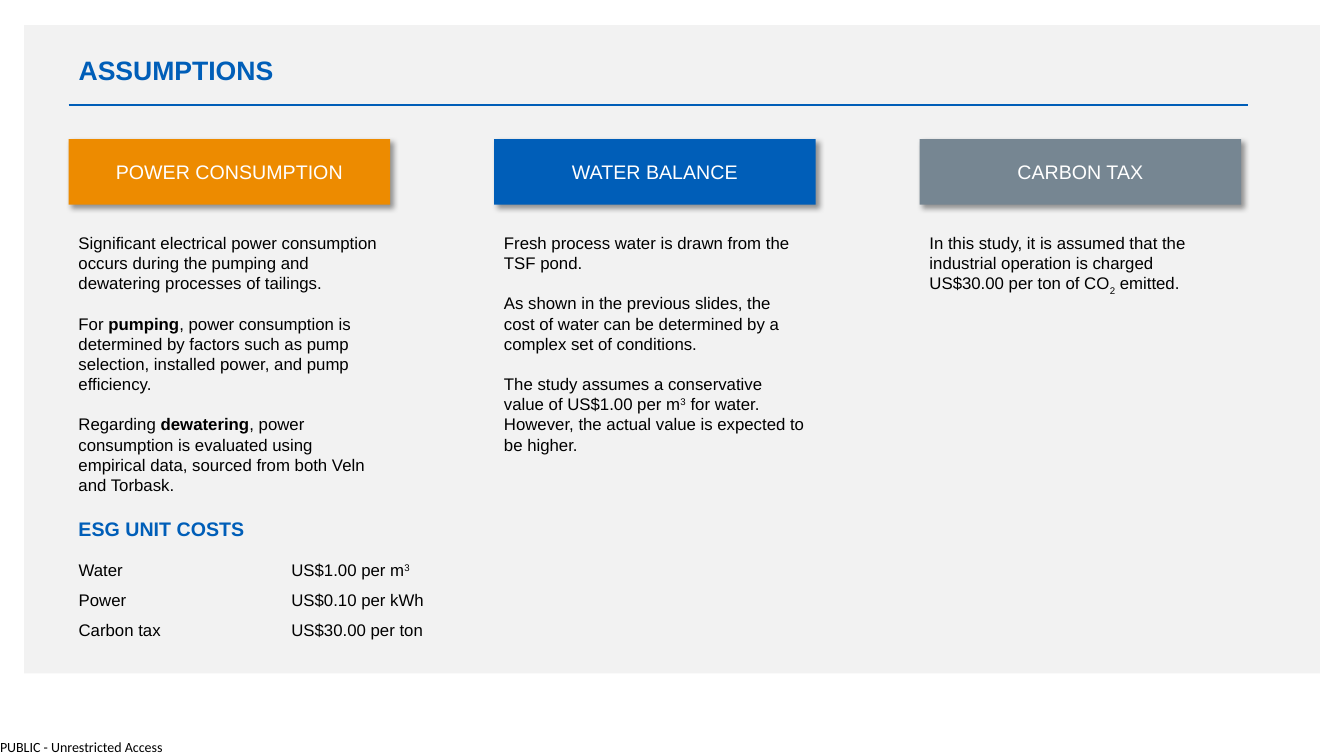
import dataclasses

import pptx
import pptx.dml.color
import pptx.enum.shapes
import pptx.enum.text
import pptx.oxml
import pptx.oxml.ns
import pptx.util

ANCHOR = pptx.enum.text.MSO_ANCHOR
ALIGN = pptx.enum.text.PP_ALIGN
RECT = pptx.enum.shapes.MSO_SHAPE.RECTANGLE
STRAIGHT = pptx.enum.shapes.MSO_CONNECTOR.STRAIGHT
NS = pptx.oxml.ns.nsdecls("a")
NO_STYLE = "{2D5ABB26-0587-4C30-8999-92F81FD0307C}"


@dataclasses.dataclass(frozen=True)
class Theme:
    blue: str = "005EB8"
    orange: str = "ED8B00"
    slate: str = "768692"
    panel: str = "F2F2F2"
    white: str = "FFFFFF"
    black: str = "000000"
    font: str = "Arial"
    label_font: str = "Calibri"
    title: float = 19
    heading: float = 14
    body: float = 12
    label: float = 10
    gap: float = 14.4


@dataclasses.dataclass(frozen=True)
class Box:
    """A rectangle in inches."""
    x: float
    y: float
    w: float
    h: float

    def emu(self):
        return [pptx.util.Inches(v) for v in (self.x, self.y, self.w, self.h)]


THEME = Theme()
SLIDE = Box(0, 0, 13.33, 7.5)
PANEL = Box(0.24, 0.25, 12.85, 6.43)
LEFT, PITCH, COLUMN_W = 0.68, 4.22, 3.19
HEADER_H, BODY_DROP = 0.65, 0.88

# Each paragraph is a list of (text, style) runs.
COLUMNS = [
    ("POWER CONSUMPTION", THEME.orange, [
        [("Significant electrical power consumption occurs during the pumping "
          "and dewatering processes of tailings.", "")],
        [("For ", ""), ("pumping", "bold"),
         (", power consumption is determined by factors such as pump "
          "selection, installed power, and pump efficiency.", "")],
        [("Regarding ", ""), ("dewatering", "bold"),
         (", power consumption is evaluated using empirical data, sourced "
          "from both Veln and Torbask.", "")],
    ]),
    ("WATER BALANCE", THEME.blue, [
        [("Fresh process water is drawn from the TSF pond.", "")],
        [("As shown in the previous slides, the cost of water can be "
          "determined by a complex set of conditions.", "")],
        [("The study assumes a conservative value of US$1.00 per m", ""),
         ("3", "super"),
         (" for water. However, the actual value is expected to be higher.", "")],
    ]),
    ("CARBON TAX", THEME.slate, [
        [("In this study, it is assumed that the industrial operation is "
          "charged US$30.00 per ton of CO", ""), ("2", "sub"), (" emitted.", "")],
    ]),
]
UNIT_COSTS = [
    ("Water", [("US$1.00 per m", ""), ("3", "super")]),
    ("Power", [("US$0.10 per kWh", "")]),
    ("Carbon tax", [("US$30.00 per ton", "")]),
]
BASELINES = {"super": "30000", "sub": "-25000"}


def rgb(color):
    return pptx.dml.color.RGBColor.from_string(color)


def write(p, runs, size, color=THEME.black, bold=False, font=THEME.font):
    for text, style in runs:
        r = p.add_run()
        r.text = text
        r.font.name, r.font.size = font, pptx.util.Pt(size)
        r.font.color.rgb = rgb(color)
        r.font.bold = bold or style == "bold"
        if style in BASELINES:
            r.font._element.set("baseline", BASELINES[style])


def add_text(slide, box, paragraphs, size, **style):
    sp = slide.shapes.add_textbox(*box.emu())
    tf = sp.text_frame
    tf.word_wrap = True
    for i, runs in enumerate(paragraphs):
        p = tf.add_paragraph() if i else tf.paragraphs[0]
        if i:
            p.space_before = pptx.util.Pt(THEME.gap)
        write(p, runs, size, **style)
    return tf


def add_block(slide, box, color):
    sp = slide.shapes.add_shape(RECT, *box.emu())
    sp.shadow.inherit = False
    sp.fill.solid()
    sp.fill.fore_color.rgb = rgb(color)
    sp.line.fill.background()
    return sp


def add_shadow(sp):
    effects = sp._element.spPr.find(pptx.oxml.ns.qn("a:effectLst"))
    effects.append(pptx.oxml.parse_xml(
        f'<a:outerShdw {NS} blurRad="{pptx.util.Pt(4)}" dist="{pptx.util.Pt(3)}" '
        'dir="2700000" algn="tl" rotWithShape="0"><a:srgbClr val="000000">'
        '<a:alpha val="40000"/></a:srgbClr></a:outerShdw>'))


def add_frame(slide, panel):
    """Grey panel, rule under the title and access label."""
    add_block(slide, panel, THEME.panel)
    y = panel.y + 0.79
    ends = [pptx.util.Inches(v) for v in (LEFT, y, LEFT + 11.7, y)]
    rule = slide.shapes.add_connector(STRAIGHT, *ends)
    rule.line.color.rgb = rgb(THEME.blue)
    rule.line.width = pptx.util.Pt(1)
    rule._element.spPr.append(pptx.oxml.parse_xml(f"<a:effectLst {NS}/>"))
    tf = add_text(slide, Box(0, SLIDE.h - 0.17, 1.65, 0.17),
                  [[("PUBLIC - Unrestricted Access", "")]],
                  THEME.label, font=THEME.label_font)
    tf.margin_left = tf.margin_right = tf.margin_top = tf.margin_bottom = 0


def add_title(slide, box, text):
    title = slide.shapes.title
    slide.shapes._spTree.append(title._element)  # in front of the panel
    title.left, title.top, title.width, title.height = box.emu()
    tf = title.text_frame
    tf.vertical_anchor = ANCHOR.TOP
    tf.auto_size = pptx.enum.text.MSO_AUTO_SIZE.NONE
    p = tf.paragraphs[0]
    p.alignment, p.line_spacing = ALIGN.LEFT, 0.75
    write(p, [(text, "")], THEME.title, THEME.blue, bold=True)


def add_column(slide, box, heading, color, paragraphs):
    header = add_block(slide, Box(box.x, box.y, box.w, HEADER_H), color)
    add_shadow(header)
    header.text_frame.vertical_anchor = ANCHOR.MIDDLE
    p = header.text_frame.paragraphs[0]
    p.alignment = ALIGN.CENTER
    write(p, [(heading, "")], THEME.heading, THEME.white)
    add_text(slide, Box(box.x, box.y + BODY_DROP, box.w, box.h - BODY_DROP),
             paragraphs, THEME.body)


def add_unit_costs(slide, box, heading, rows):
    add_text(slide, Box(box.x, box.y, box.w, 0.34), [[(heading, "")]],
             THEME.heading, color=THEME.blue, bold=True)
    grid = Box(box.x - 0.15, box.y + 0.43, 3.93, 0.3 * len(rows))
    table = slide.shapes.add_table(len(rows), 2, *grid.emu()).table
    table.first_row = table.horz_banding = False
    table._tbl.tblPr.find(pptx.oxml.ns.qn("a:tableStyleId")).text = NO_STYLE
    for column, width in zip(table.columns, (2.31, 1.62)):
        column.width = pptx.util.Inches(width)
    for i, (name, cost) in enumerate(rows):
        for j, runs in enumerate(([(name, "")], cost)):
            cell = table.cell(i, j)
            cell.fill.background()
            cell.vertical_anchor = ANCHOR.MIDDLE
            cell.margin_left = pptx.util.Inches(0.05 if j else 0.25)
            cell.margin_right = pptx.util.Inches(0.05)
            cell.margin_top = cell.margin_bottom = 0
            write(cell.text_frame.paragraphs[0], runs, THEME.body)


def main():
    prs = pptx.Presentation()
    prs.slide_width, prs.slide_height = SLIDE.emu()[2:]
    slide = prs.slides.add_slide(prs.slide_layouts[5])
    add_frame(slide, PANEL)
    add_title(slide, Box(LEFT, 0.56, 9.84, 0.4), "ASSUMPTIONS")
    for i, column in enumerate(COLUMNS):
        add_column(slide, Box(LEFT + i * PITCH, 1.38, COLUMN_W, 3.61), *column)
    add_unit_costs(slide, Box(LEFT, 5.08, 6.71, 1.33), "ESG UNIT COSTS", UNIT_COSTS)
    prs.save("out.pptx")


if __name__ == "__main__":
    main()
